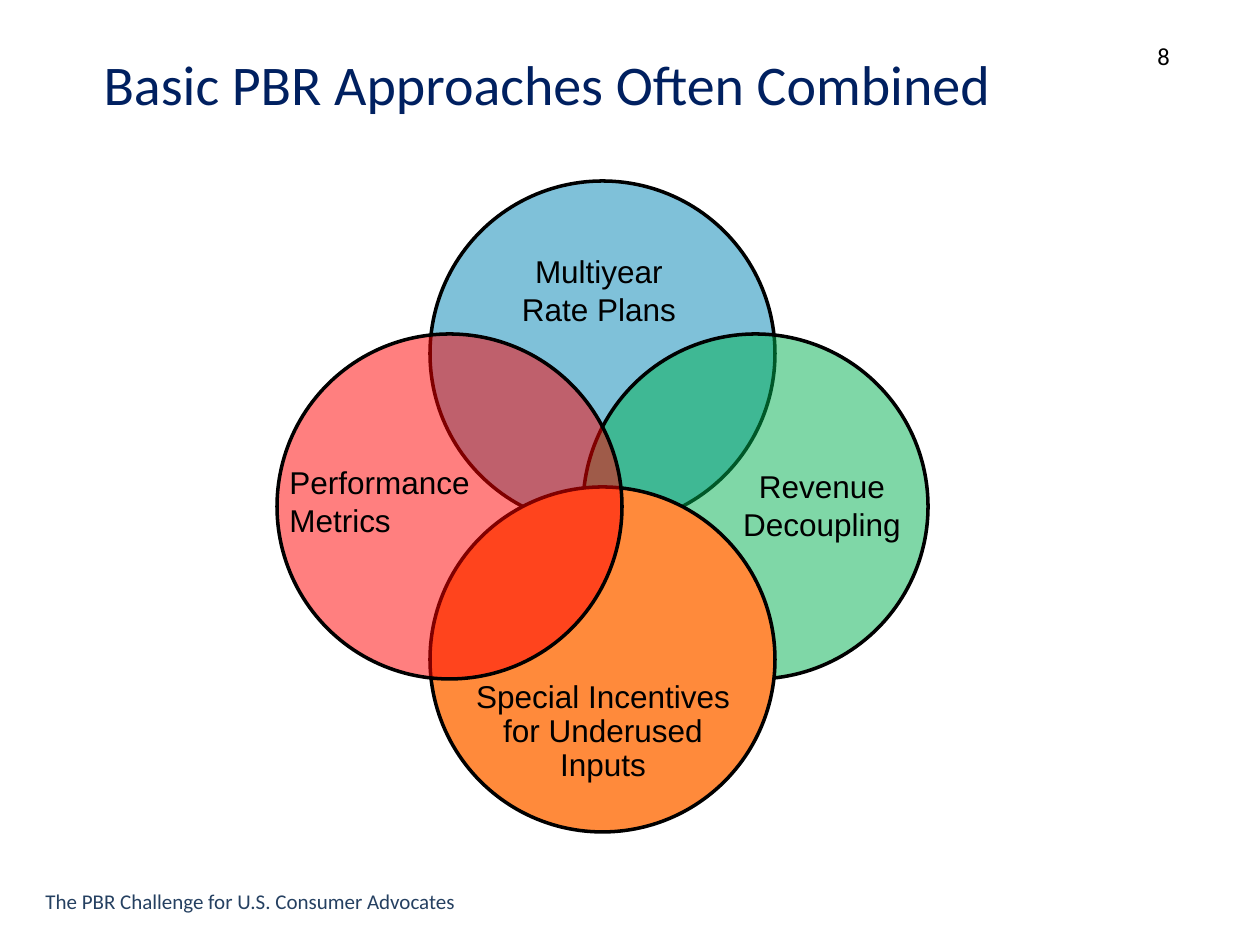
import pptx
import pptx.util
import pptx.dml.color
import pptx.enum.shapes
import pptx.enum.text
import pptx.oxml
import pptx.oxml.ns

SCALE = 914400 / 126  # EMU in one px
COLORS = {
    "ink": "000000", "title": "002060", "foot": "254061",
    "blue": "0085B4", "green": "00B050", "orange": "FF8A3B", "red": "FF0000",
}
ALIGN = pptx.enum.text.PP_ALIGN
ANCHOR = pptx.enum.text.MSO_ANCHOR


def px(n):
    return pptx.util.Emu(round(n * SCALE))


def rgb(name):
    return pptx.dml.color.RGBColor.from_string(COLORS[name])


def fill_text(frame, lines, size, font, color, align, spacing=None):
    frame.word_wrap = True
    for i, line in enumerate(lines):
        para = frame.paragraphs[0] if i == 0 else frame.add_paragraph()
        para.alignment = align
        if spacing:
            para.line_spacing = spacing
        run = para.add_run()
        run.text = line
        run.font.size = pptx.util.Pt(size)
        run.font.name = font
        run.font.color.rgb = rgb(color)


def add_text(slide, box, lines, size=18, font="Arial", color="ink",
             align=ALIGN.LEFT):
    shape = slide.shapes.add_textbox(*map(px, box))
    fill_text(shape.text_frame, lines, size, font, color, align)


def add_title(slide, box, text):
    title = slide.shapes.title
    title.left, title.top, title.width, title.height = map(px, box)
    title.text_frame.vertical_anchor = ANCHOR.MIDDLE
    fill_text(title.text_frame, [text], 32, "Calibri", "title", ALIGN.LEFT)


def add_circle(slide, box, color, alpha):
    oval = slide.shapes.add_shape(
        pptx.enum.shapes.MSO_SHAPE.OVAL, *map(px, box))
    oval.shadow.inherit = False
    oval.fill.solid()
    oval.fill.fore_color.rgb = rgb(color)
    oval.line.color.rgb = rgb("ink")
    oval.line.width = pptx.util.Pt(2)
    if alpha < 100:
        tint = oval.fill._xPr.find(".//" + pptx.oxml.ns.qn("a:srgbClr"))
        node = pptx.oxml.parse_xml(
            f'<a:alpha {pptx.oxml.ns.nsdecls("a")} val="{alpha * 1000}"/>')
        tint.append(node)


def add_venn(slide, box):
    left, top, side = box
    size = 345
    step = (side - size) / 2

    # Circles from back to front: column, row, colour, opacity
    for col, row, color, alpha in [
        (1, 0, "blue", 50),
        (2, 1, "green", 50),
        (1, 2, "orange", 100),
        (0, 1, "red", 50),
    ]:
        spot = (left + col * step, top + row * step, size, size)
        add_circle(slide, spot, color, alpha)

    # Labels of the three translucent circles
    for x, y, width, lines, align in [
        (222, 65, 200, ["Multiyear", "Rate Plans"], ALIGN.CENTER),
        (0, 276, 213, ["Performance Metrics"], ALIGN.LEFT),
        (445, 280, 200, ["Revenue", "Decoupling"], ALIGN.CENTER),
    ]:
        add_text(slide, (left + x, top + y, width, 89), lines, align=align)

    # Label of the solid circle
    label = slide.shapes.add_textbox(
        px(left + 193), px(top + 496), px(266), px(110))
    frame = label.text_frame
    frame.margin_left = frame.margin_right = 0
    frame.margin_top = frame.margin_bottom = 0
    frame.vertical_anchor = ANCHOR.MIDDLE
    fill_text(frame, ["Special Incentives for Underused Inputs"],
              18, "Arial", "ink", ALIGN.CENTER, 0.9)


def main():
    deck = pptx.Presentation()
    deck.slide_width, deck.slide_height = px(1260), px(945)
    slide = deck.slides.add_slide(deck.slide_layouts[5])

    # Heading and page number
    add_title(slide, (91, 30, 1090, 106), "Basic PBR Approaches Often Combined")
    add_text(slide, (1145, 35, 103, 32), ["8"], 14, "Calibri")

    # Four overlapping approaches
    add_venn(slide, (277, 181, 651))

    # Footer
    add_text(slide, (33, 882, 611, 45),
             ["The PBR Challenge for U.S. Consumer Advocates"],
             12, "Calibri", "foot")
    deck.save("out.pptx")


if __name__ == "__main__":
    main()
